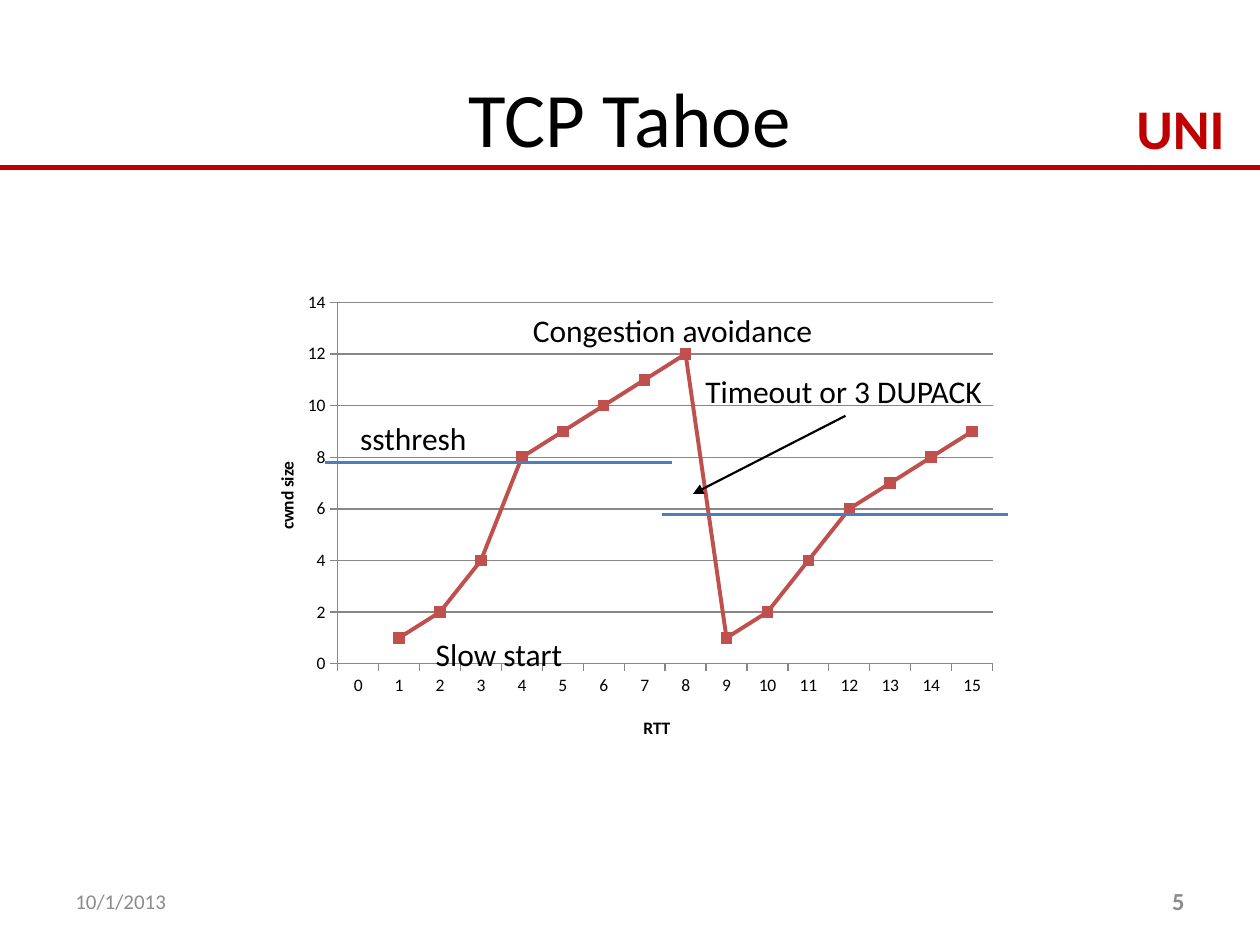
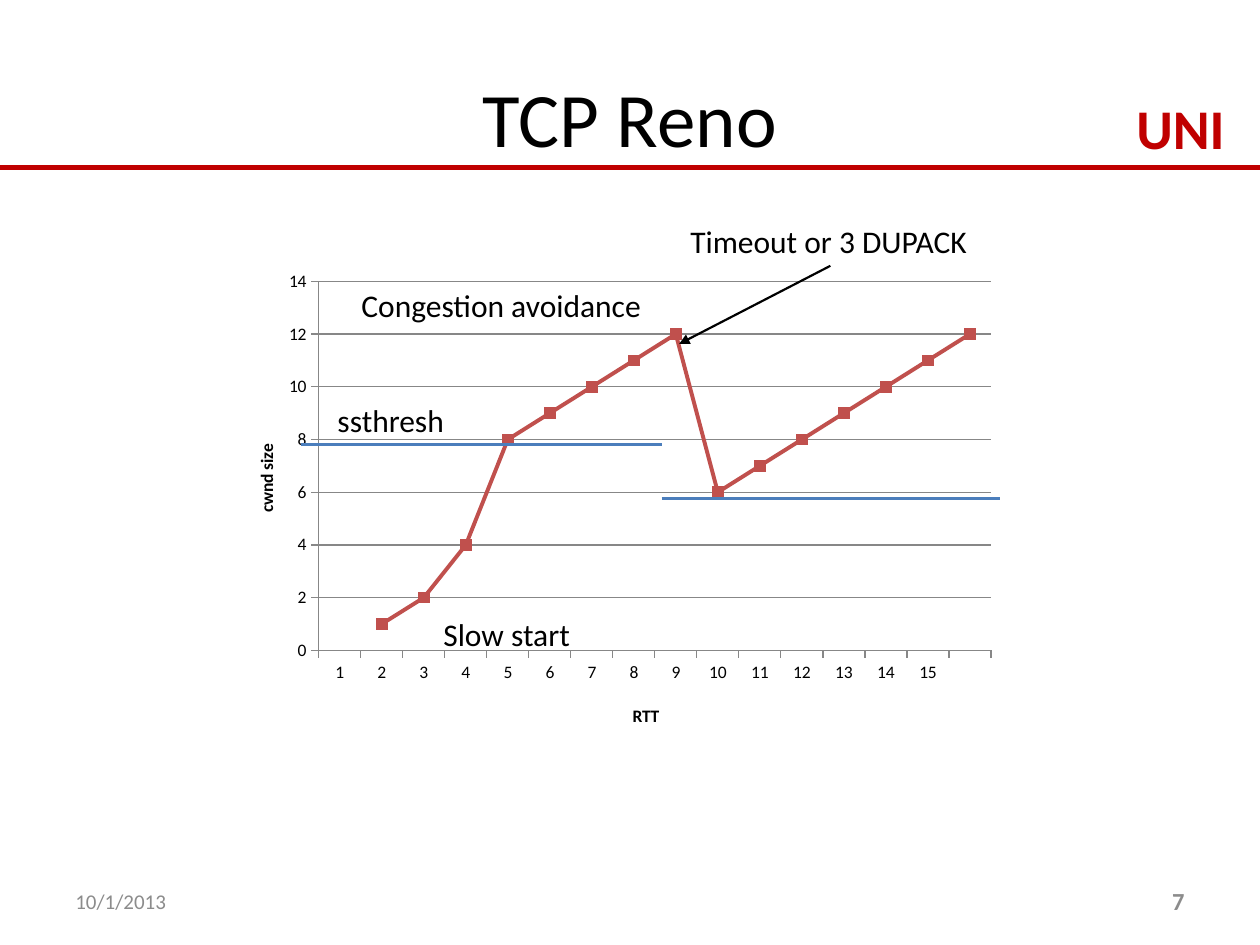
"""Build two slides comparing congestion windows of TCP Tahoe and TCP Reno."""
from lxml import etree
from pptx import Presentation
from pptx.chart.data import CategoryChartData
from pptx.dml.color import RGBColor
from pptx.enum import chart as charts, shapes, text
from pptx.oxml import ns
from pptx.util import Inches, Pt

RED = RGBColor(0xC0, 0x00, 0x00)
CURVE_RED = RGBColor(0xC0, 0x50, 0x4D)
BLUE = RGBColor(0x4B, 0x7E, 0xBC)
GREY = RGBColor(0x8C, 0x8C, 0x8C)
GRID_GREY = RGBColor(0x87, 0x87, 0x87)
BLACK = RGBColor(0x00, 0x00, 0x00)
FONT = "Calibri"
LEFT, CENTER, RIGHT = text.PP_ALIGN.LEFT, text.PP_ALIGN.CENTER, text.PP_ALIGN.RIGHT

SLIDES = [
    {
        "title": "TCP Tahoe",
        "number": "5",
        "chart": (1.92, 2.25, 6.08, 3.75),
        "rounds": [str(i) for i in range(16)],
        "windows": [None, 1, 2, 4, 8, 9, 10, 11, 12, 1, 2, 4, 6, 7, 8, 9],
        "thresholds": [(2.58, 3.67, 5.33), (5.25, 4.08, 8)],
        "arrow": (6.71, 3.3, 5.5, 3.92),
        "labels": [
            ("Slow start", 3.36, 4.99, 1.22),
            ("Congestion avoidance", 4.13, 2.42, 2.45),
            ("ssthresh", 2.76, 3.28, 1.05),
            ("Timeout or 3 DUPACK", 5.5, 2.9, 2.42),
        ],
    },
    {
        "title": "TCP Reno",
        "number": "7",
        "chart": (1.75, 2.08, 6.24, 3.83),
        "rounds": [str(i) for i in range(1, 16)] + [""],
        "windows": [None, 1, 2, 4, 8, 9, 10, 11, 12, 6, 7, 8, 9, 10, 11, 12],
        "thresholds": [(2.39, 3.53, 5.25), (5.25, 3.96, 7.94)],
        "arrow": (6.59, 2.11, 5.39, 2.73),
        "labels": [
            ("Slow start", 3.42, 4.83, 1.22),
            ("Congestion avoidance", 2.77, 2.22, 2.45),
            ("ssthresh", 2.58, 3.13, 1.05),
            ("Timeout or 3 DUPACK", 5.38, 1.71, 2.42),
        ],
    },
]


def add_label(page, words, place, size, color=BLACK, bold=False, align=LEFT, wrap=False):
    box = page.shapes.add_textbox(*map(Inches, place))
    frame = box.text_frame
    frame.word_wrap = wrap
    if wrap:
        frame.vertical_anchor = text.MSO_ANCHOR.MIDDLE
    else:
        frame.auto_size = text.MSO_AUTO_SIZE.SHAPE_TO_FIT_TEXT
    para = frame.paragraphs[0]
    para.text = words
    para.alignment = align
    para.font.name = FONT
    para.font.size = Pt(size)
    para.font.bold = bold
    para.font.color.rgb = color


def add_line(page, ends, color, width):
    line = page.shapes.add_connector(shapes.MSO_CONNECTOR.STRAIGHT, *map(Inches, ends))
    line.line.color.rgb = color
    line.line.width = Pt(width)
    etree.SubElement(line._element.spPr, ns.qn("a:effectLst"))
    return line


deck = Presentation()
deck.slide_width = Inches(10)
deck.slide_height = Inches(7.5)

for content in SLIDES:
    page = deck.slides.add_slide(deck.slide_layouts[6])
    add_label(page, "UNI", (8.92, 0.69, 0.97, 0.64), 32, RED, bold=True)
    add_line(page, (0, 1.33, 10, 1.33), RED, 3.25)
    add_label(page, content["title"], (0.5, 0.3, 9, 1.25), 44, align=CENTER, wrap=True)
    add_label(page, "10/1/2013", (0.5, 6.95, 2.33, 0.4), 12, GREY, wrap=True)
    add_label(page, content["number"], (7.17, 6.95, 2.33, 0.4), 14, GREY,
              bold=True, align=RIGHT, wrap=True)

    data = CategoryChartData()
    data.categories = content["rounds"]
    data.add_series("Series 1", content["windows"])
    chart = page.shapes.add_chart(charts.XL_CHART_TYPE.LINE_MARKERS,
                                  *map(Inches, content["chart"]), data).chart
    chart.has_title = False
    chart.has_legend = False
    chart.font.name = FONT
    chart.font.size = Pt(10)
    chart.font.color.rgb = BLACK
    plot = chart.plots[0]
    plot.vary_by_categories = False

    curve = plot.series[0]
    curve.smooth = False
    curve.format.line.color.rgb = CURVE_RED
    curve.format.line.width = Pt(2.25)
    curve.marker.style = charts.XL_MARKER_STYLE.SQUARE
    curve.marker.size = 6
    curve.marker.format.fill.solid()
    curve.marker.format.fill.fore_color.rgb = CURVE_RED
    curve.marker.format.line.color.rgb = CURVE_RED

    for axis, name in ((chart.category_axis, "RTT"), (chart.value_axis, "cwnd size")):
        axis.axis_title.text_frame.text = name
        title_font = axis.axis_title.text_frame.paragraphs[0].font
        title_font.name = FONT
        title_font.size = Pt(10)
        title_font.bold = True
        title_font.color.rgb = BLACK
        axis.major_tick_mark = charts.XL_TICK_MARK.OUTSIDE
        axis.format.line.color.rgb = GRID_GREY
    chart.category_axis.has_major_gridlines = False
    scale = chart.value_axis
    scale.minimum_scale, scale.maximum_scale, scale.major_unit = 0, 14, 2
    scale.major_gridlines.format.line.color.rgb = GRID_GREY

    plot_area = chart._chartSpace.chart.plotArea
    axis_titles = plot_area.findall(".//" + ns.qn("c:title"))
    for parent, index, position in (
        (plot_area, 0, {"layoutTarget": "inner", "xMode": "edge", "yMode": "edge",
                        "x": 0.125, "y": 0.04, "w": 0.855, "h": 0.765}),
        (axis_titles[0], 1, {"xMode": "edge", "yMode": "edge", "x": 0.52, "y": 0.91}),
        (axis_titles[1], 1, {"xMode": "edge", "yMode": "edge", "x": 0.04, "y": 0.37}),
    ):
        for old_layout in parent.findall(ns.qn("c:layout")):
            parent.remove(old_layout)
        layout = etree.Element(ns.qn("c:layout"))
        manual = etree.SubElement(layout, ns.qn("c:manualLayout"))
        for key, value in position.items():
            etree.SubElement(manual, ns.qn("c:" + key), val=str(value))
        parent.insert(index, layout)

    for start, height, end in content["thresholds"]:
        add_line(page, (start, height, end, height), BLUE, 1.75)
    arrow = add_line(page, content["arrow"], BLACK, 1.25)
    etree.SubElement(arrow.line._get_or_add_ln(), ns.qn("a:tailEnd"), type="triangle")
    for words, left, top, width in content["labels"]:
        add_label(page, words, (left, top, width, 0.4), 18)

deck.save("out.pptx")
